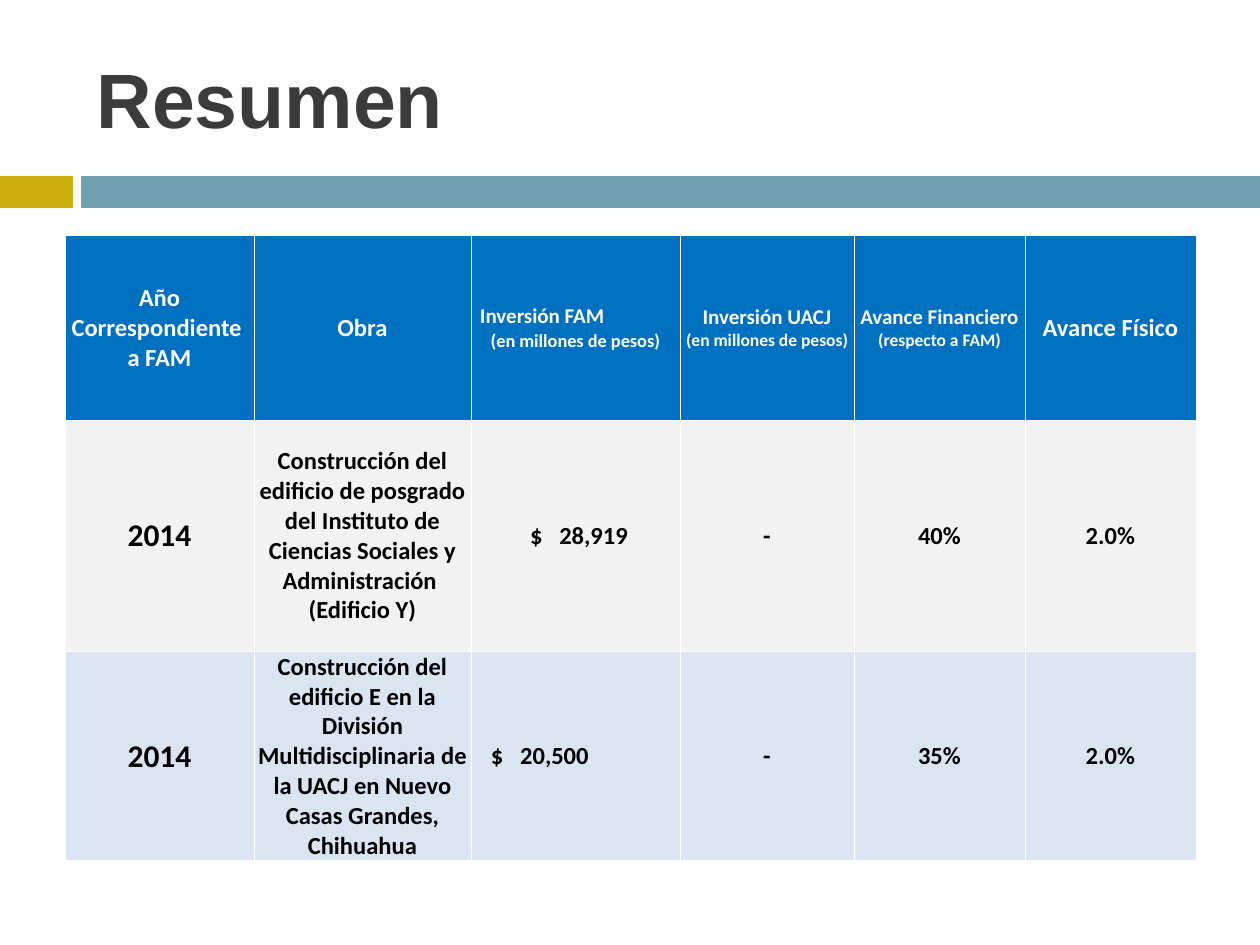
from lxml import etree
from pptx import Presentation
from pptx import util as u
from pptx.dml.color import RGBColor
from pptx.enum import shapes, text
from pptx.oxml.ns import qn

WHITE = RGBColor(0xFF, 0xFF, 0xFF)
BLACK = RGBColor(0, 0, 0)
CHARCOAL = RGBColor(0x3B, 0x3B, 0x3B)
GOLD = RGBColor(0xCC, 0xAF, 0x0A)
TEAL = RGBColor(0x6E, 0xA0, 0xB0)
BLUE = RGBColor(0x00, 0x70, 0xC0)
GREY = RGBColor(0xF2, 0xF2, 0xF2)
PALE = RGBColor(0xDB, 0xE5, 0xF1)

PX_PER_INCH = 126
LEFT, CENTER = text.PP_ALIGN.LEFT, text.PP_ALIGN.CENTER
MIDDLE = text.MSO_ANCHOR.MIDDLE


def px(length):
    return u.Emu(u.Inches(length) // PX_PER_INCH)


def apply(target, values):
    for name, value in values.items():
        setattr(target, name, value)


def line(*spans, align=CENTER, indent=0):
    """One paragraph; each span is (wording, points[, letter spacing])."""
    return spans, align, indent


def money(amount, **place):
    return [line(("$ ", 14, 3.2), (amount, 14), **place)]


def plain(wording, size=14):
    return [line((wording, size))]


class SlideBuilder:
    cell_font = {"name": "Calibri", "bold": True}
    title_font = {"name": "Arial", "bold": True, "size": u.Pt(44)}
    cell_format = {"margin_left": px(1), "margin_right": px(1),
                   "margin_top": px(1), "margin_bottom": 0,
                   "vertical_anchor": MIDDLE}

    def __init__(self, page):
        self.page = page

    def title(self, wording, *place):
        box = self.page.shapes.title
        apply(box, dict(zip(("left", "top", "width", "height"), map(px, place))))
        apply(box.text_frame, {"vertical_anchor": MIDDLE, "word_wrap": True,
                               "auto_size": text.MSO_AUTO_SIZE.NONE})
        para = box.text_frame.paragraphs[0]
        para.alignment = LEFT
        span = para.add_run()
        span.text = wording
        apply(span.font, self.title_font)
        span.font.color.rgb = CHARCOAL

    def bar(self, color, *place):
        shape = self.page.shapes.add_shape(
            shapes.MSO_SHAPE.RECTANGLE, *map(px, place))
        shape.shadow.inherit = False
        shape.fill.solid()
        shape.fill.fore_color.rgb = color
        shape.line.fill.background()

    def table(self, left, top, widths, heights, rows):
        """Each row is (fill, text colour, cells)."""
        frame = self.page.shapes.add_table(
            len(heights), len(widths), px(left), px(top),
            px(sum(widths)), px(sum(heights)))
        grid = frame.table
        grid.horz_banding = False
        for column, width in zip(grid.columns, widths):
            column.width = px(width)
        for row, height, (fill, color, cells) in zip(grid.rows, heights, rows):
            row.height = px(height)
            for cell, lines in zip(row.cells, cells):
                self.cell(cell, fill, color, lines)

    def cell(self, cell, fill, color, lines):
        apply(cell, self.cell_format)
        self.borders(cell)
        cell.fill.solid()
        cell.fill.fore_color.rgb = fill
        for number, (spans, align, indent) in enumerate(lines):
            frame = cell.text_frame
            para = frame.add_paragraph() if number else frame.paragraphs[0]
            para.alignment = align
            if indent:
                para._p.get_or_add_pPr().set("marL", str(px(indent)))
            for wording, size, *spacing in spans:
                span = para.add_run()
                span.text = wording
                apply(span.font, {**self.cell_font, "size": u.Pt(size)})
                span.font.color.rgb = color
                if spacing:
                    span._r.get_or_add_rPr().set("spc", str(int(spacing[0] * 100)))

    def borders(self, cell):
        properties = cell._tc.get_or_add_tcPr()
        for side in ("lnL", "lnR", "lnT", "lnB"):
            edge = etree.SubElement(properties, qn(f"a:{side}"), w=str(u.Pt(0.5)))
            solid = etree.SubElement(edge, qn("a:solidFill"))
            etree.SubElement(solid, qn("a:srgbClr"), val=str(WHITE))


def main():
    deck = Presentation()
    deck.slide_width, deck.slide_height = px(1260), px(945)
    builder = SlideBuilder(deck.slides.add_slide(deck.slide_layouts[5]))

    # Title and the two-part band below it
    builder.title("Resumen", 84, 38, 1113, 119)
    builder.bar(GOLD, 0, 176, 73, 32)
    builder.bar(TEAL, 81, 176, 1179, 32)

    # Summary of works
    header = [
        plain("Año") + plain("Correspondiente ") + plain("a FAM"),
        plain("Obra"),
        [line(("Inversión FAM", 12), align=LEFT, indent=8),
         line(("(en millones de pesos)", 10.5))],
        plain("Inversión UACJ", 12) + plain("(en millones de pesos)", 10),
        [line(("Avance Financiero ", 12), ("(respecto a FAM)", 10))],
        plain("Avance Físico"),
    ]
    graduate_building = [
        plain("2014", 18),
        plain("Construcción del edificio de posgrado del Instituto de "
              "Ciencias Sociales y Administración ") + plain("(Edificio Y)"),
        money("28,919", indent=7),
        plain("-"), plain("40%"), plain("2.0%"),
    ]
    building_e = [
        plain("2014", 18),
        plain("Construcción del edificio E en la División Multidisciplinaria "
              "de la UACJ en Nuevo Casas Grandes, Chihuahua"),
        money("20,500", align=LEFT, indent=19),
        plain("-"), plain("35%"), plain("2.0%"),
    ]
    builder.table(65, 235, (189, 217, 209, 174, 171, 171), (185, 231, 209), [
        (BLUE, WHITE, header),
        (GREY, BLACK, graduate_building),
        (PALE, BLACK, building_e),
    ])

    deck.save("out.pptx")


if __name__ == "__main__":
    main()
